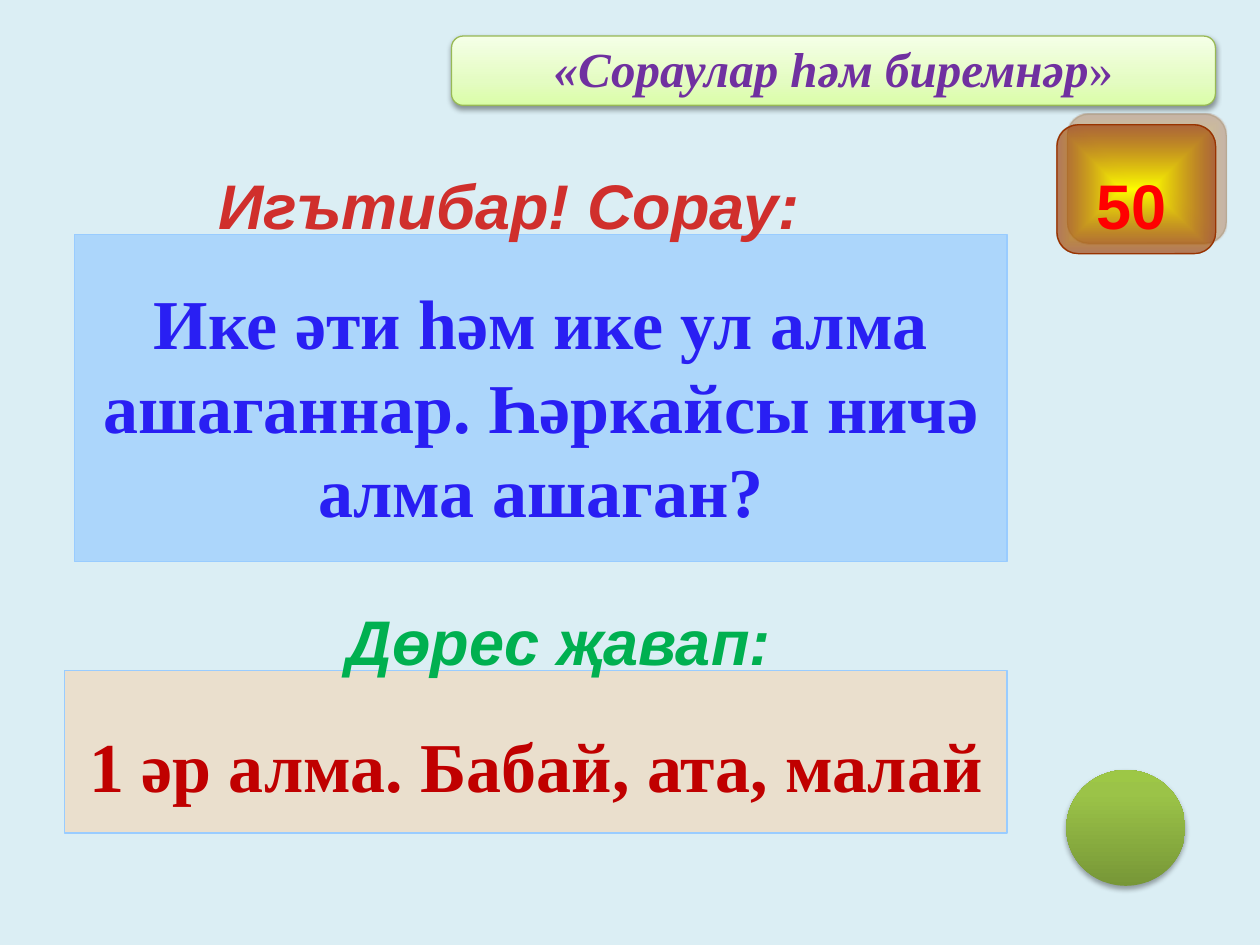
from dataclasses import dataclass

from lxml.etree import SubElement
from pptx import Presentation
from pptx.dml.color import RGBColor
from pptx.enum.shapes import MSO_SHAPE
from pptx.enum.text import MSO_ANCHOR, PP_ALIGN
from pptx.oxml.ns import qn
from pptx.util import Pt


@dataclass(frozen=True)
class Theme:
    """Colours, fonts and type sizes of the quiz slide."""
    background: str = "DBEEF4"
    serif: str = "Times New Roman"
    sans: str = "Arial"
    title_size: int = 28
    heading_size: int = 36
    body_size: int = 40
    title: str = "7030A0"
    title_border: str = "98B955"
    title_fill: tuple = ((0, "DAFDA7", 100), (35, "E4FCC2", 100), (100, "F5FFE7", 100))
    button_fill: tuple = ((0, "779737", 100), (80, "9BC348", 100), (100, "9DC746", 100))
    badge_fill: tuple = ((0, "FFFF00", 100), (100, "993300", 62))
    badge_border: str = "993300"
    badge_shadow: str = "996633"
    score: str = "FF0000"
    shadow: str = "000000"
    panel_border: str = "99CCFF"
    question_fill: tuple = ("99CCFF", 70)
    question_heading: str = "D02F2C"
    question: str = "291FF3"
    answer_fill: tuple = ("FFCC99", 42)
    answer_heading: str = "00B050"
    answer: str = "C00000"


T = Theme()


def rgb(value):
    """Turn a hex string into a colour."""
    return RGBColor.from_string(value)


def add_color(parent, value, alpha):
    """Append a colour with an opacity in percent."""
    clr = SubElement(parent, qn("a:srgbClr"), val=value)
    if alpha < 100:
        SubElement(clr, qn("a:alpha"), val=str(alpha * 1000))


def set_gradient(s, stops, angle=None):
    """Fill a shape with a linear gradient, or a rectangular one without an angle."""
    s.fill.gradient()
    grad = s._element.spPr.find(qn("a:gradFill"))
    for child in list(grad):
        grad.remove(child)
    stop_list = SubElement(grad, qn("a:gsLst"))
    for pos, value, alpha in stops:
        add_color(SubElement(stop_list, qn("a:gs"), pos=str(pos * 1000)), value, alpha)
    if angle is None:
        path = SubElement(grad, qn("a:path"), path="rect")
        SubElement(path, qn("a:fillToRect"), dict.fromkeys("ltrb", "50000"))
    else:
        SubElement(grad, qn("a:lin"), ang=str(angle * 60000), scaled="0")


def set_shadow(s, value, alpha, blur, dist, angle):
    """Give a shape an outer shadow."""
    effects = s._element.spPr.find(qn("a:effectLst"))
    shadow = SubElement(effects, qn("a:outerShdw"), blurRad=str(Pt(blur)), dist=str(Pt(dist)),
                        dir=str(angle * 60000), algn="ctr", rotWithShape="0")
    add_color(shadow, value, alpha)


def add_box(slide, kind, box, border=None):
    """Add a plain shape with an optional thin border."""
    s = slide.shapes.add_shape(kind, *map(Pt, box))
    s.shadow.inherit = False
    if border:
        s.line.color.rgb = rgb(border)
        s.line.width = Pt(0.75)
    else:
        s.line.fill.background()
    return s


def style_paragraph(p, font, size, color, italic=False):
    """Centre a paragraph and set its bold font."""
    p.alignment = PP_ALIGN.CENTER
    p.font.name = font
    p.font.size = Pt(size)
    p.font.color.rgb = rgb(color)
    p.font.bold = True
    p.font.italic = italic


def add_label(slide, box, text, color, italic=False):
    """Add a one-line heading without insets."""
    tf = slide.shapes.add_textbox(*map(Pt, box)).text_frame
    tf.margin_left = tf.margin_right = tf.margin_top = tf.margin_bottom = 0
    tf.word_wrap = True
    p = tf.paragraphs[0]
    p.text = text
    style_paragraph(p, T.sans, T.heading_size, color, italic)


def add_title(slide, box):
    """Add the title banner."""
    s = add_box(slide, MSO_SHAPE.ROUNDED_RECTANGLE, box, T.title_border)
    set_gradient(s, T.title_fill, 270)
    set_shadow(s, T.shadow, 38, 3.1, 1.6, 90)
    tf = s.text_frame
    tf.vertical_anchor = MSO_ANCHOR.MIDDLE
    tf.word_wrap = True
    tf.margin_top, tf.margin_bottom = 0, Pt(3)
    p = tf.paragraphs[0]
    p.add_run().text = "«Сораулар һәм биремнәр"
    r = p.add_run()
    r.text = "»"
    style_paragraph(p, T.serif, T.title_size, T.title, italic=True)
    r.font.bold = r.font.italic = False


def add_panel(slide, box, heading, heading_color, shift, text, color, fill, drop):
    """Add a text panel with a heading on its top edge, moved sideways by shift."""
    left, top, width, height = box
    s = add_box(slide, MSO_SHAPE.RECTANGLE, box, T.panel_border)
    value, alpha = fill
    s.fill.solid()
    s.fill.fore_color.rgb = rgb(value)
    clr = s._element.spPr.find(qn("a:solidFill"))[0]
    SubElement(clr, qn("a:alpha"), val=str(alpha * 1000))
    tf = s.text_frame
    tf.vertical_anchor = MSO_ANCHOR.MIDDLE
    tf.word_wrap = True
    tf.margin_top = Pt(3.6 + drop)
    p = tf.paragraphs[0]
    p.text = text
    style_paragraph(p, T.serif, T.body_size, color)
    add_label(slide, (left + shift, top - 39, width, 42), heading, heading_color, italic=True)


def add_badge(slide, box, score):
    """Add the score badge."""
    left, top, width, _ = box
    s = add_box(slide, MSO_SHAPE.ROUNDED_RECTANGLE, box, T.badge_border)
    set_gradient(s, T.badge_fill)
    set_shadow(s, T.badge_shadow, 50, 0, 8.5, 315)
    add_label(slide, (left - 3, top + 24, width, 42), score, T.score)


def add_button(slide, box):
    """Add the round button."""
    s = add_box(slide, MSO_SHAPE.OVAL, box)
    set_gradient(s, T.button_fill, 270)
    set_shadow(s, T.shadow, 35, 3.1, 1.8, 90)


def main():
    """Build the quiz slide."""
    prs = Presentation()
    prs.slide_width, prs.slide_height = Pt(720), Pt(540)
    slide = prs.slides.add_slide(prs.slide_layouts[6])
    slide.background.fill.solid()
    slide.background.fill.fore_color.rgb = rgb(T.background)
    add_button(slide, (609.3, 440, 68, 66.2))
    add_panel(slide, (42.5, 134, 533, 187), "Игътибар! Сорау:", T.question_heading, -18,
              "Ике әти һәм ике ул алма ашаганнар. Һәркайсы ничә алма ашаган?",
              T.question, T.question_fill, 8)
    add_panel(slide, (37, 383.3, 538.5, 92.7), "Дөрес җавап:", T.answer_heading, 13,
              "1 әр алма. Бабай, ата, малай", T.answer, T.answer_fill, 14)
    add_badge(slide, (604, 71.3, 90.7, 73.7), "50")
    add_title(slide, (258, 20.6, 436.5, 39.6))
    prs.save("out.pptx")


if __name__ == "__main__":
    main()
